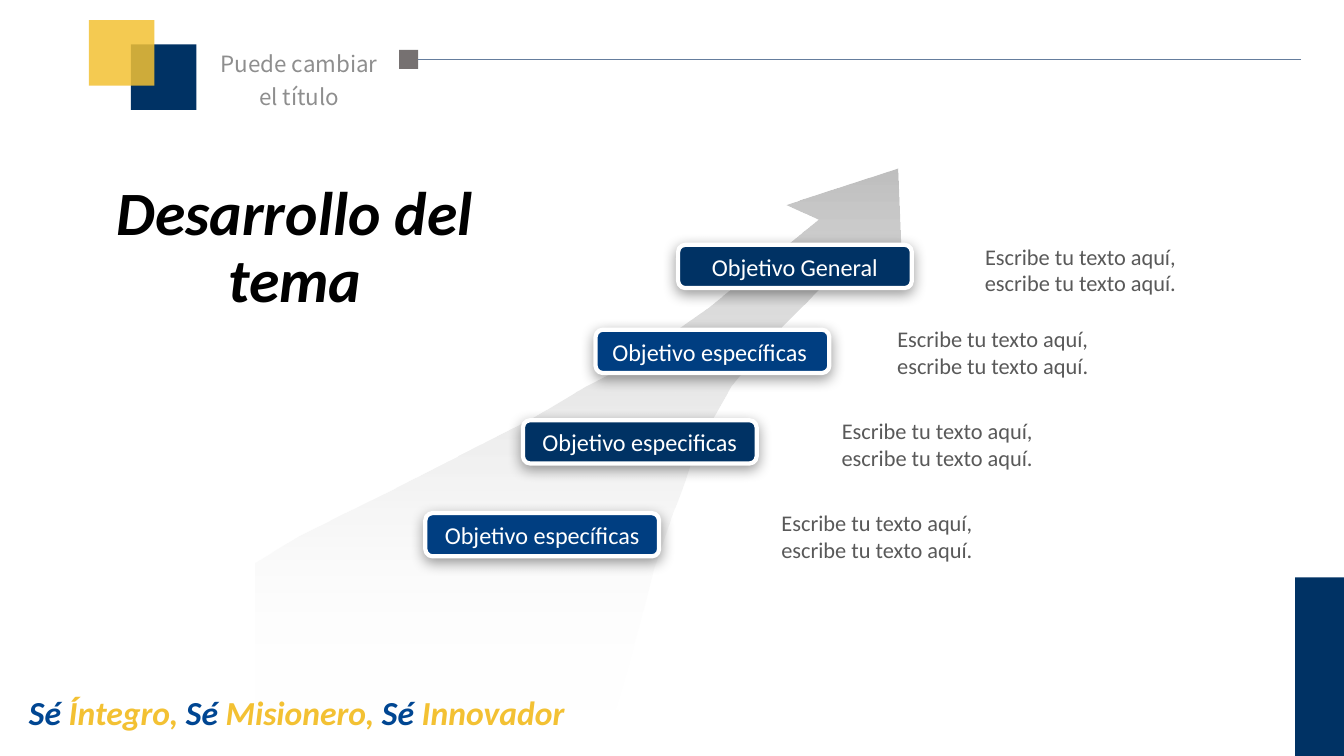
from lxml.etree import SubElement
from pptx import Presentation
from pptx.dml.color import RGBColor
from pptx.enum.dml import MSO_LINE
from pptx.enum.shapes import MSO_CONNECTOR, MSO_SHAPE
from pptx.enum.text import MSO_ANCHOR, MSO_AUTO_SIZE, PP_ALIGN
from pptx.oxml.ns import qn
from pptx.util import Cm, Pt

NAVY = RGBColor(0x00, 0x32, 0x64)
BLUE = RGBColor(0x00, 0x3E, 0x81)
MOTTO_BLUE = RGBColor(0x00, 0x46, 0x92)
GOLD = RGBColor(0xF3, 0xC1, 0x33)
WHITE = RGBColor(0xFF, 0xFF, 0xFF)
BLACK = RGBColor(0x00, 0x00, 0x00)
SILVER = RGBColor(0xBF, 0xBF, 0xBF)
GREY = RGBColor(0x76, 0x71, 0x71)
HEADING_GREY = RGBColor(0x8E, 0x8E, 0x8E)
NOTE_GREY = RGBColor(0x59, 0x59, 0x59)
RULE_BLUE = RGBColor(0x65, 0x7D, 0x9D)

prs = Presentation()
prs.slide_width, prs.slide_height = Cm(33.87), Cm(19.05)
slide = prs.slides.add_slide(prs.slide_layouts[6])
shapes = slide.shapes


def add_block(kind, left, top, width, height, color=None):
    block = shapes.add_shape(kind, Cm(left), Cm(top), Cm(width), Cm(height))
    block.shadow.inherit = False
    block.line.fill.background()
    if color is None:
        block.fill.background()
    else:
        block.fill.solid()
        block.fill.fore_color.rgb = color
    return block


def write(frame, pieces, size, font="Calibri", strong=False, align=PP_ALIGN.CENTER, spacing=None):
    paragraph = frame.paragraphs[0]
    paragraph.alignment = align
    paragraph.line_spacing = spacing
    for text, color in pieces:
        run = paragraph.add_run()
        run.text = text
        run.font.name = font
        run.font.size = Pt(size)
        run.font.bold = run.font.italic = strong
        run.font.color.rgb = color


marker = add_block(MSO_SHAPE.RECTANGLE, 10.06, 1.26, 0.48, 0.48, GREY)
rule = shapes.add_connector(MSO_CONNECTOR.STRAIGHT, Cm(32.79), Cm(1.5), Cm(10.54), Cm(1.5))
rule.end_connect(marker, 3)
rule.line.color.rgb = RULE_BLUE
rule.line.width = Pt(0.5)
SubElement(rule._element.spPr, qn("a:effectLst"))

heading = shapes.add_textbox(Cm(5.33), Cm(1.14), Cm(4.42), Cm(0.91)).text_frame
heading.word_wrap = True
heading.margin_left = heading.margin_right = heading.margin_top = heading.margin_bottom = 0
write(heading, [("Puede cambiar el título", HEADING_GREY)], 16, "Noto Sans CJK SC", spacing=1.2)

add_block(MSO_SHAPE.RECTANGLE, 3.3, 1.12, 1.65, 1.65, NAVY)
gold_square = add_block(MSO_SHAPE.RECTANGLE, 2.24, 0.51, 1.65, 1.65, GOLD)
gold_color = gold_square._element.spPr.find(".//" + qn("a:srgbClr"))
SubElement(gold_color, qn("a:alpha"), val="85000")

ARROW_OUTLINE = [
    (6.45, 14.17), (7.57, 13.49), (8.74, 12.9), (9.98, 12.29), (11.56, 11.48),
    (13.49, 10.49), (14.73, 9.75), (15.6, 9.3), (16.74, 8.53), (17.78, 7.8),
    (18.72, 7.04), (19.48, 6.45), (20.6, 5.54), (19.79, 5.16), (22.61, 4.24),
    (22.71, 6.73), (21.79, 6.15), (20.68, 7.24), (19.35, 8.59), (18.42, 9.73),
    (17.96, 10.54), (17.5, 11.38), (17.25, 12.14), (16.97, 12.88), (16.48, 14.3),
    (16.13, 15.65), (15.85, 16.71), (15.49, 17.93), (6.45, 17.93),
]
corners = [(Cm(x), Cm(y)) for x, y in ARROW_OUTLINE]
outline = shapes.build_freeform(*corners[0])
outline.add_line_segments(corners[1:], close=True)
arrow = outline.convert_to_shape()
arrow.shadow.inherit = False
arrow.line.fill.background()
arrow.fill.gradient()
arrow.fill.gradient_angle = 270
for stop, color, position in zip(arrow.fill.gradient_stops, (SILVER, WHITE), (0, 1)):
    stop.color.rgb = color
    stop.position = position
fade_color = arrow._element.spPr.findall(".//" + qn("a:srgbClr"))[-1]
SubElement(fade_color, qn("a:alpha"), val="0")

OBJECTIVES = [
    ("Objetivo específicas", BLUE, 10.72, 12.93),
    ("Objetivo especificas", NAVY, 13.18, 10.59),
    ("Objetivo específicas ", BLUE, 15.01, 8.31),
    ("Objetivo General", NAVY, 17.09, 6.17),
]
for label, color, left, top in OBJECTIVES:
    objective = add_block(MSO_SHAPE.ROUNDED_RECTANGLE, left, top, 5.89, 1.09, color)
    objective.line.color.rgb = WHITE
    objective.line.width = Pt(3)
    effects = objective._element.spPr.find(qn("a:effectLst"))
    shade = SubElement(effects, qn("a:outerShdw"), blurRad=str(Pt(10)), dist=str(Pt(3)),
                       dir="5400000", rotWithShape="0")
    shade_color = SubElement(shade, qn("a:srgbClr"), val="000000")
    SubElement(shade_color, qn("a:alpha"), val="40000")
    objective.text_frame.vertical_anchor = MSO_ANCHOR.MIDDLE
    write(objective.text_frame, [(label, WHITE)], 17.3)

for left, top in [(19.18, 12.7), (20.7, 10.39), (22.1, 8.08), (24.31, 5.99)]:
    note = add_block(MSO_SHAPE.RECTANGLE, left, top, 5.84, 1.6)
    note.line.color.rgb = WHITE
    note.line.width = Pt(0.75)
    note.line.dash_style = MSO_LINE.DASH
    note.text_frame.vertical_anchor = MSO_ANCHOR.TOP
    note.text_frame.auto_size = MSO_AUTO_SIZE.SHAPE_TO_FIT_TEXT
    write(note.text_frame, [("Escribe tu texto aquí, escribe tu texto aquí.", NOTE_GREY)], 16)

motto = shapes.add_textbox(Cm(0.48), Cm(17.3), Cm(14.12), Cm(1.27)).text_frame
motto.word_wrap = False
motto.auto_size = MSO_AUTO_SIZE.SHAPE_TO_FIT_TEXT
motto_pieces = []
for virtue in (" Íntegro, ", " Misionero, ", " Innovador"):
    motto_pieces += [("Sé", MOTTO_BLUE), (virtue, GOLD)]
write(motto, motto_pieces, 24, strong=True, align=PP_ALIGN.LEFT)

add_block(MSO_SHAPE.RECTANGLE, 32.64, 14.55, 1.23, 4.5, NAVY)

topic = shapes.add_textbox(Cm(2.49), Cm(4.5), Cm(9.88), Cm(3.58)).text_frame
topic.word_wrap = True
topic.vertical_anchor = MSO_ANCHOR.BOTTOM
write(topic, [("Desarrollo del tema", BLACK)], 44, strong=True, spacing=0.9)

prs.save("out.pptx")
